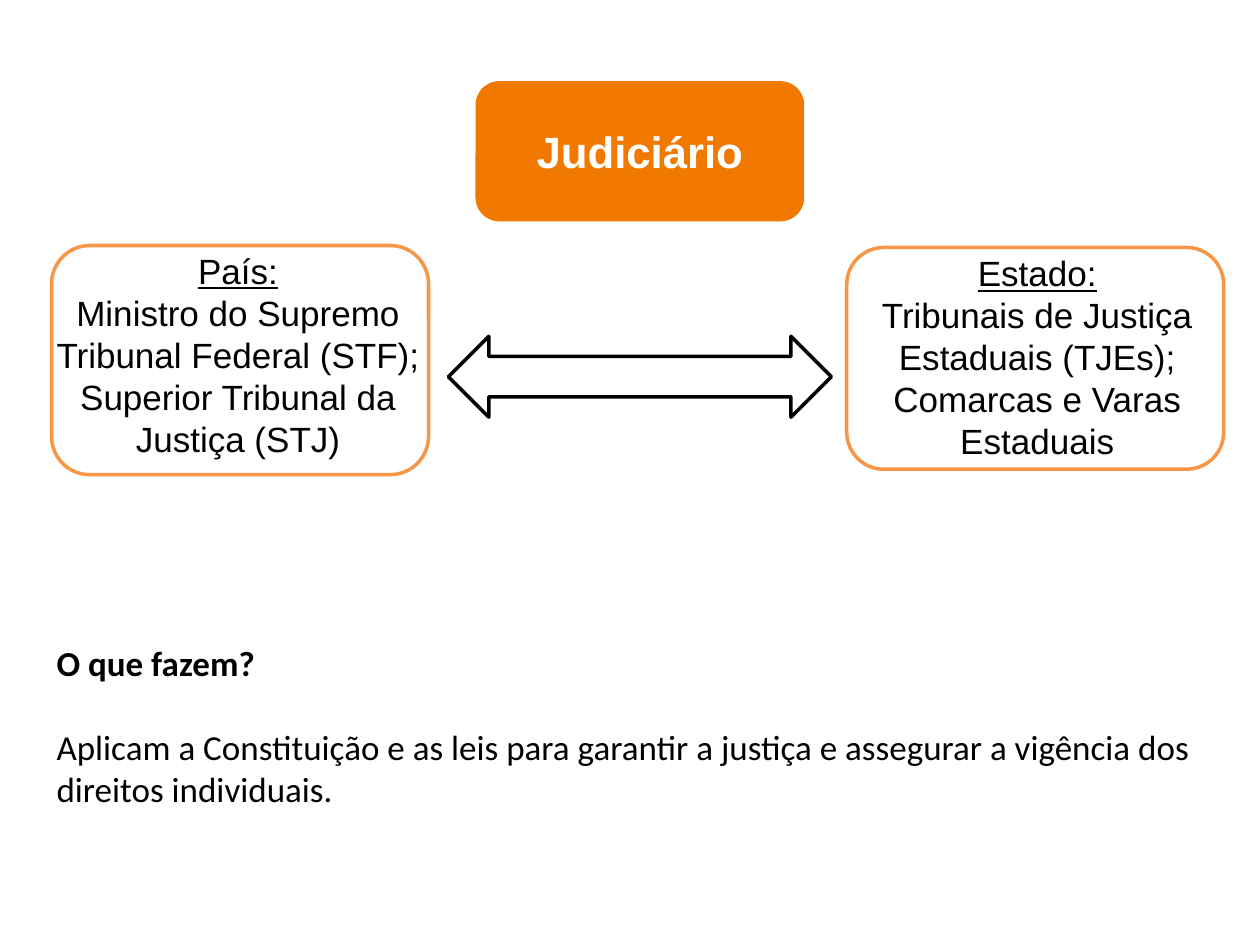
from dataclasses import dataclass

from pptx import Presentation
from pptx import util as u
from pptx.dml.color import RGBColor
from pptx.enum import shapes, text

COLORS = {
    "orange": "F27900",
    "border": "F79646",
    "black": "000000",
    "white": "FFFFFF",
}


@dataclass
class Box:
    """Position and size in centimetres."""
    left: float
    top: float
    width: float
    height: float

    def lengths(self) -> list:
        return [u.Cm(n) for n in (self.left, self.top, self.width, self.height)]


@dataclass
class Line:
    """One paragraph of text."""
    words: str
    bold: bool = False
    underline: bool = False
    space_after: float = 0


@dataclass
class Court:
    """A level of the judiciary: its frame and its text."""
    frame: Box
    label: Box
    lines: list[Line]


def color(name: str) -> RGBColor:
    return RGBColor.from_string(COLORS[name])


def add_shape(slide, kind, box: Box, line: str, points: float, fill: str = ""):
    shape = slide.shapes.add_shape(kind, *box.lengths())
    shape.shadow.inherit = False
    if fill:
        shape.fill.solid()
        shape.fill.fore_color.rgb = color(fill)
    else:
        shape.fill.background()
    shape.line.color.rgb = color(line)
    shape.line.width = u.Pt(points)
    return shape


def write_lines(shape, lines: list[Line], font: str, size: float,
                ink: str, align) -> None:
    frame = shape.text_frame
    for index, line in enumerate(lines):
        paragraph = frame.add_paragraph() if index else frame.paragraphs[0]
        paragraph.alignment = align
        paragraph.space_after = u.Pt(line.space_after)
        run = paragraph.add_run()
        run.text = line.words
        run.font.name = font
        run.font.size = u.Pt(size)
        run.font.bold = line.bold
        run.font.underline = line.underline
        run.font.color.rgb = color(ink)


def add_text(slide, box: Box, lines: list[Line], font: str, align) -> None:
    shape = slide.shapes.add_textbox(*box.lengths())
    shape.text_frame.word_wrap = True
    write_lines(shape, lines, font, 20, "black", align)


def main() -> None:
    presentation = Presentation()
    presentation.slide_width = u.Cm(25.4)
    presentation.slide_height = u.Cm(19.05)
    slide = presentation.slides.add_slide(presentation.slide_layouts[6])
    preset = shapes.MSO_SHAPE
    center = text.PP_ALIGN.CENTER

    # Title
    title = add_shape(slide, preset.FLOWCHART_ALTERNATE_PROCESS,
                      Box(9.6, 1.65, 6.6, 2.8), "orange", 0.75, "orange")
    title.text_frame.word_wrap = False
    title.text_frame.vertical_anchor = text.MSO_ANCHOR.MIDDLE
    write_lines(title, [Line("Judiciário", bold=True)], "Arial", 25, "white", center)

    # Country and state courts
    courts = [
        Court(Box(1.04, 4.95, 7.6, 4.62), Box(0.2, 4.9, 9.2, 5.38), [
            Line("País:", underline=True),
            Line("Ministro do Supremo Tribunal Federal (STF);"),
            Line("Superior Tribunal da Justiça (STJ)"),
        ]),
        Court(Box(17.07, 4.99, 7.6, 4.47), Box(17.15, 4.95, 7.52, 4.52), [
            Line("Estado:", underline=True),
            Line("Tribunais de Justiça Estaduais (TJEs);"),
            Line("Comarcas e Varas Estaduais"),
        ]),
    ]
    for court in courts:
        add_shape(slide, preset.ROUNDED_RECTANGLE, court.frame, "border", 2)
        add_text(slide, court.label, court.lines, "Arial", center)

    # Arrow between the courts
    add_shape(slide, preset.LEFT_RIGHT_ARROW, Box(9.04, 6.78, 7.72, 1.63),
              "black", 2, "white")

    # What they do
    add_text(slide, Box(0.89, 12.8, 23.62, 3.68), [
        Line("O que fazem?", bold=True, space_after=24),
        Line("Aplicam a Constituição e as leis para garantir a justiça "
             "e assegurar a vigência dos direitos individuais."),
    ], "Calibri", text.PP_ALIGN.LEFT)

    presentation.save("out.pptx")


if __name__ == "__main__":
    main()
